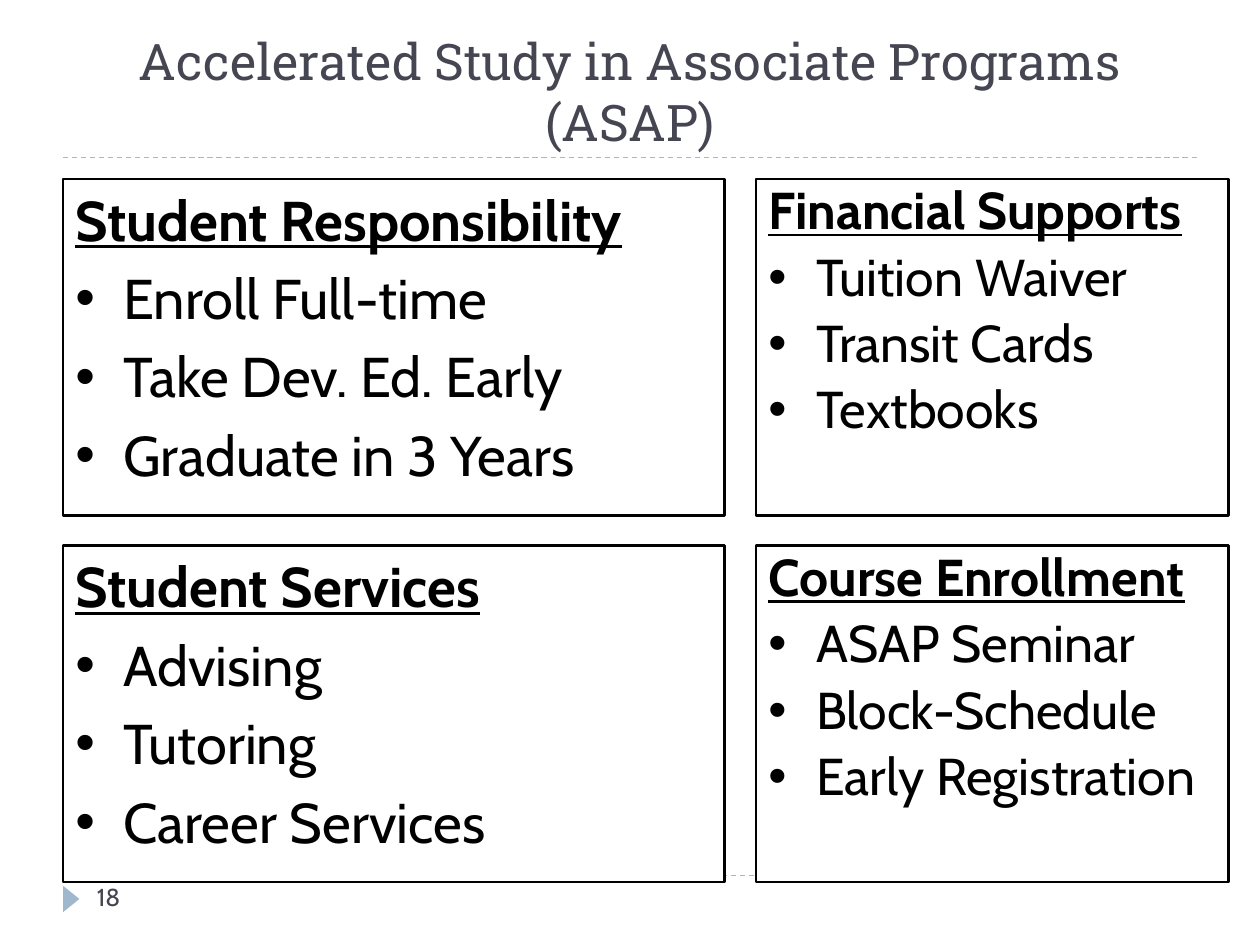
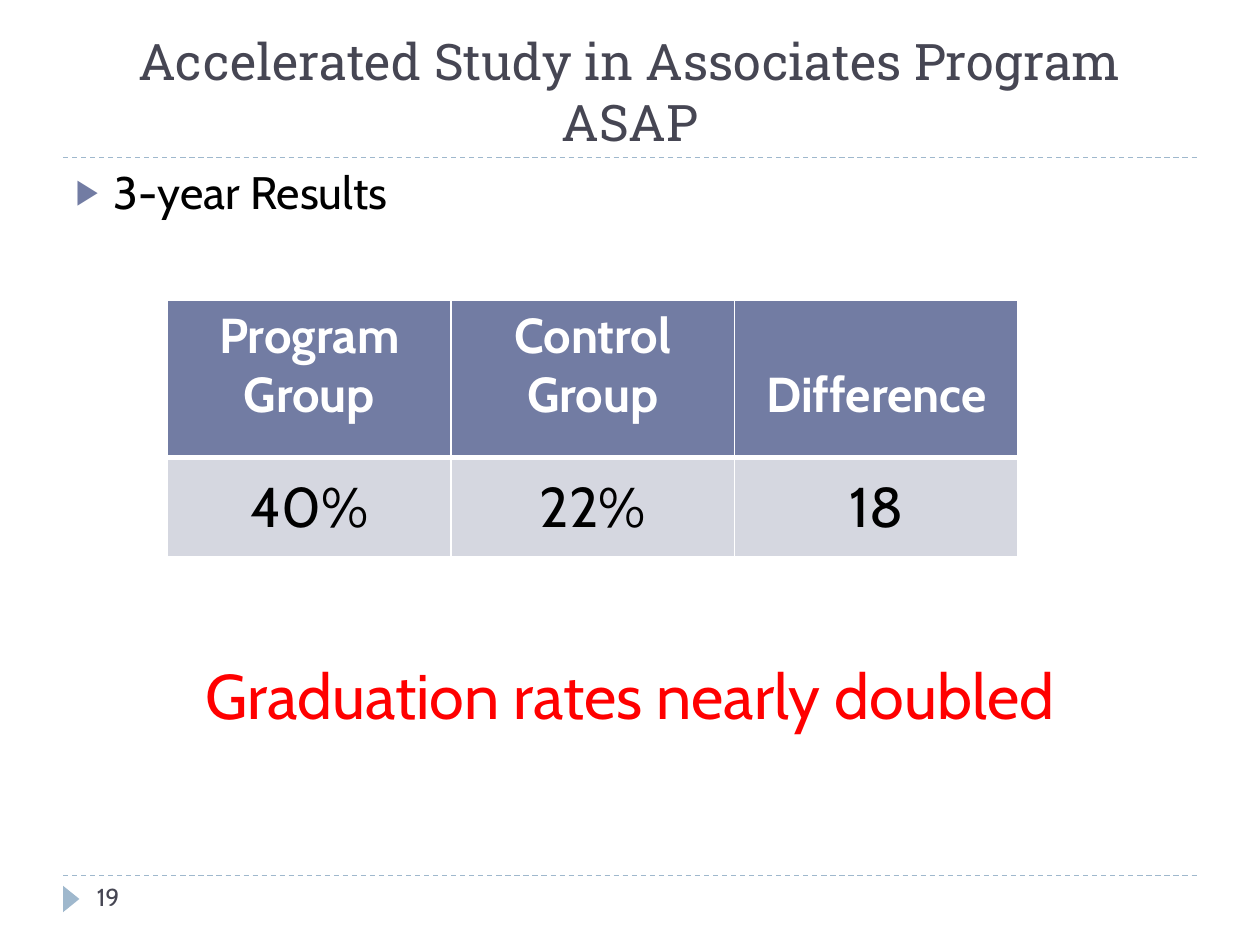
import pptx
import pptx.dml.color
import pptx.enum.dml
import pptx.enum.shapes
import pptx.enum.text
import pptx.oxml
import pptx.oxml.ns
import pptx.util
from lxml import etree

Inches = pptx.util.Inches
Pt = pptx.util.Pt
Align = pptx.enum.text.PP_ALIGN
Anchor = pptx.enum.text.MSO_ANCHOR
Shape = pptx.enum.shapes.MSO_SHAPE

COLORS = {
    "title": "464653",
    "rule": "9FB8CD",
    "accent": "727CA3",
    "cell": "D5D7E0",
    "text": "000000",
    "paper": "FFFFFF",
    "alert": "FF0000",
}
TITLE_FONT, TEXT_FONT = "Roboto Slab", "Cabin"

PROGRAM_TITLE = ("Accelerated Study in Associate Programs", "(ASAP)")
COMPONENTS = [  # rows of (heading, items)
    [
        ("Student Responsibility",
         ["Enroll Full-time", "Take Dev. Ed. Early", "Graduate in 3 Years"]),
        ("Financial Supports", ["Tuition Waiver", "Transit Cards", "Textbooks"]),
    ],
    [
        ("Student Services", ["Advising", "Tutoring", "Career Services"]),
        ("Course Enrollment",
         ["ASAP Seminar", "Block-Schedule", "Early Registration"]),
    ],
]
COMPONENT_COLUMNS = [  # left, width, text size, line spacing
    (0.5, 5.25, 32, 1.0),
    (6, 3.75, 29.6, 0.9),
]
COMPONENT_TOP, COMPONENT_HEIGHT, COMPONENT_GAP = 1.42, 2.67, 0.24

RESULTS_TITLE = ("Accelerated Study in Associates Program", "ASAP")
RESULTS_LEAD = "3-year Results"
RESULTS = [
    ["Program Group", "Control Group", "Difference"],
    ["40%", "22%", "18"],
]
RESULT_ROW_HEIGHTS = [1.25, 0.79]
RESULT_COLUMN_WIDTH = 2.25
RESULTS_MESSAGE = "Graduation rates nearly doubled"


def rgb(name):
    return pptx.dml.color.RGBColor.from_string(COLORS[name])


def frame(left, top, width, height):
    return [Inches(length) for length in (left, top, width, height)]


def move(shape, *box):
    shape.left, shape.top, shape.width, shape.height = frame(*box)


def set_font(para, size, color="text", name=TEXT_FONT, bold=False, underline=False):
    font = para.font
    font.name, font.size = name, Pt(size)
    font.bold, font.underline = bold, underline
    font.color.rgb = rgb(color)


def child(parent, tag, **attributes):
    return etree.SubElement(parent, pptx.oxml.ns.qn("a:" + tag), attributes)


def set_indent(para, hang, bullet=None, color=None, percent=None):
    """Hang the first line and give the paragraph its bullet, if any."""
    properties = para._p.get_or_add_pPr()
    properties.set("marL", str(Inches(hang)))
    properties.set("indent", str(-Inches(hang)))
    if color:
        child(child(properties, "buClr"), "srgbClr", val=COLORS[color])
    if percent:
        child(properties, "buSzPct", val=str(percent * 1000))
    if bullet:
        child(properties, "buFont", typeface="Arial")
        child(properties, "buChar", char=bullet)
    else:
        child(properties, "buNone")


def add_rule(page, y):
    rule = page.shapes.add_connector(
        pptx.enum.shapes.MSO_CONNECTOR.STRAIGHT,
        Inches(0.5), Inches(y), Inches(9.5), Inches(y))
    rule.line.color.rgb = rgb("rule")
    rule.line.width = Pt(0.75)
    rule.line.dash_style = pptx.enum.dml.MSO_LINE.DASH
    child(rule._element.spPr, "effectLst")


def add_page(deck, layout, title_lines, number):
    """Add a slide with the shared title, rules, marker and page number."""
    page = deck.slides.add_slide(deck.slide_layouts[layout])
    for y in (6.95, 1.25):
        add_rule(page, y)

    marker = page.shapes.add_shape(
        Shape.ISOSCELES_TRIANGLE, *frame(0.46, 7.07, 0.21, 0.13))
    marker.rotation = 90
    marker.shadow.inherit = False
    marker.fill.solid()
    marker.fill.fore_color.rgb = rgb("rule")
    marker.line.fill.background()

    title = page.shapes.title
    move(title, 0.5, 0.17, 9, 1.08)
    title.text_frame.auto_size = pptx.enum.text.MSO_AUTO_SIZE.NONE
    title.text_frame.vertical_anchor = Anchor.BOTTOM
    para = title.text_frame.paragraphs[0]
    para.add_run().text = title_lines[0]
    para.add_line_break()
    para.add_run().text = title_lines[1]
    para.alignment = Align.CENTER
    set_font(para, 28.8, "title", TITLE_FONT)

    add_text(page, (0.67, 6.95, 2.17, 0.4), str(number), 14, "title")
    return page


def add_text(page, box, text, size, color, alignment=Align.LEFT):
    text_frame = page.shapes.add_textbox(*frame(*box)).text_frame
    text_frame.word_wrap = True
    para = text_frame.paragraphs[0]
    para.text = text
    para.alignment = alignment
    set_font(para, size, color)


def add_component(page, box, heading, items, size, spacing):
    panel = page.shapes.add_shape(Shape.RECTANGLE, *frame(*box))
    panel.shadow.inherit = False
    panel.fill.solid()
    panel.fill.fore_color.rgb = rgb("paper")
    panel.line.color.rgb = rgb("text")
    panel.line.width = Pt(1.5)
    text_frame = panel.text_frame
    text_frame.word_wrap = True
    text_frame.vertical_anchor = Anchor.TOP
    for index, text in enumerate([heading, *items]):
        is_heading = index == 0
        para = text_frame.paragraphs[0] if is_heading else text_frame.add_paragraph()
        para.text = text
        para.alignment = Align.LEFT
        set_indent(para, 0.38, None if is_heading else "•")
        para.line_spacing = spacing
        para.space_before = Pt(round(size * 0.2, 1))
        set_font(para, size, bold=is_heading, underline=is_heading)


def set_borders(cell, widths):
    properties = cell._tc.get_or_add_tcPr()
    for side, width in widths.items():
        line = child(properties, "ln" + side, w=str(Pt(width)))
        child(child(line, "solidFill"), "srgbClr", val=COLORS["paper"])


def add_results_table(page):
    rows, columns = len(RESULTS), len(RESULTS[0])
    table = page.shapes.add_table(
        rows, columns,
        *frame(1.33, 2.38, columns * RESULT_COLUMN_WIDTH, sum(RESULT_ROW_HEIGHTS))).table
    for column in table.columns:
        column.width = Inches(RESULT_COLUMN_WIDTH)
    for row_index, values in enumerate(RESULTS):
        table.rows[row_index].height = Inches(RESULT_ROW_HEIGHTS[row_index])
        is_header = row_index == 0
        for column_index, value in enumerate(values):
            cell = table.cell(row_index, column_index)
            set_borders(cell, {"L": 1, "R": 1, "T": 1 if is_header else 3,
                               "B": 3 if is_header else 1})
            cell.fill.solid()
            cell.fill.fore_color.rgb = rgb("accent" if is_header else "cell")
            cell.vertical_anchor = Anchor.TOP if is_header else Anchor.MIDDLE
            para = cell.text_frame.paragraphs[0]
            para.text = value
            para.alignment = Align.CENTER
            set_font(para, 28 if is_header else 32,
                     "paper" if is_header else "text", bold=is_header)
    # The one-line heading sits level with the second line of its neighbours.
    table.cell(0, columns - 1).margin_top = Inches(0.52)


def build_components(deck):
    page = add_page(deck, 5, PROGRAM_TITLE, 18)
    for row_index, row in enumerate(COMPONENTS):
        top = COMPONENT_TOP + row_index * (COMPONENT_HEIGHT + COMPONENT_GAP)
        for (heading, items), column in zip(row, COMPONENT_COLUMNS):
            left, width, size, spacing = column
            add_component(page, (left, top, width, COMPONENT_HEIGHT),
                          heading, items, size, spacing)


def build_results(deck):
    page = add_page(deck, 1, RESULTS_TITLE, 19)
    body = page.placeholders[1]
    move(body, 0.5, 1.25, 9, 5.4)
    para = body.text_frame.paragraphs[0]
    para.text = RESULTS_LEAD
    set_indent(para, 0.3, "▶", "accent", 76)
    para.space_before = Pt(6)
    set_font(para, 26)
    add_results_table(page)
    add_text(page, (0.5, 5.16, 9, 0.71), RESULTS_MESSAGE, 36, "alert", Align.CENTER)


def main():
    deck = pptx.Presentation()
    deck.slide_width, deck.slide_height = Inches(10), Inches(7.5)
    build_components(deck)
    build_results(deck)
    deck.save("out.pptx")


if __name__ == "__main__":
    main()
